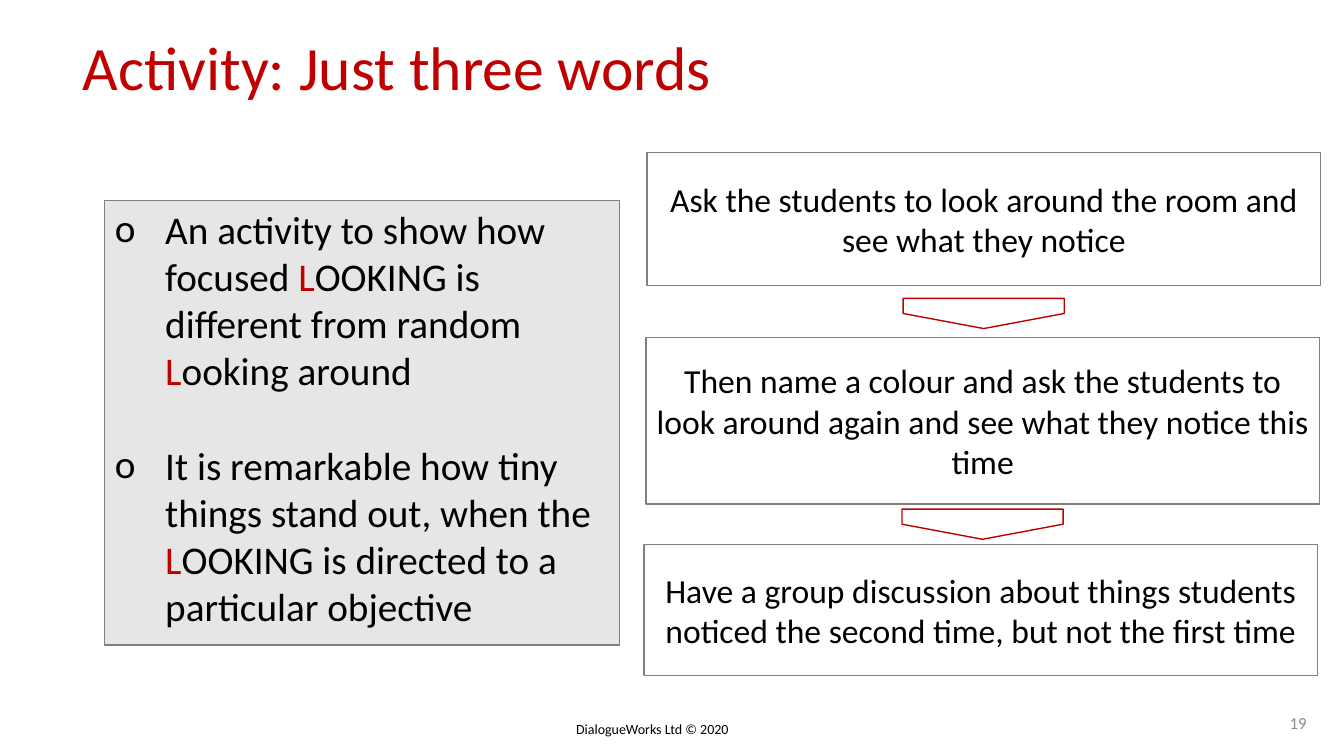
from lxml.etree import SubElement
from pptx import Presentation
from pptx.dml.color import RGBColor
from pptx.enum.shapes import MSO_SHAPE
from pptx.enum.text import MSO_ANCHOR, MSO_AUTO_SIZE, PP_ALIGN
from pptx.oxml.ns import qn
from pptx.util import Cm, Pt

COLOURS = {
    "text": "000000",
    "accent": "C00000",
    "panel": "E7E6E6",
    "outline": "808080",
    "number": "8C8C8C",
}
FONT = "Calibri"
STEP_WIDTH = 16.97
STEPS = [
    (16.31, 3.84, 3.35, "Ask the students to look around the room and see what they notice"),
    (16.28, 8.51, 4.19, "Then name a colour and ask the students to look around again "
                        "and see what they notice this time"),
    (16.23, 13.72, 3.3, "Have a group discussion about things students noticed "
                        "the second time, but not the first time"),
]
ARROWS = [(24.41, 5.87), (24.38, 11.18)]
POINTS = [
    "An activity to show how focused *L*OOKING is different from random *L*ooking around",
    "It is remarkable how tiny things stand out, when the *L*OOKING is directed "
    "to a particular objective",
]


def colour(name):
    """Return the named palette colour."""
    return RGBColor.from_string(COLOURS[name])


def place(shape, left, top, width, height):
    """Move and size a shape in centimetres."""
    shape.left, shape.top, shape.width, shape.height = map(Cm, (left, top, width, height))


def add_bullet(paragraph, character, indent):
    """Give a paragraph a hanging bullet."""
    properties = paragraph._p.get_or_add_pPr()
    properties.set("marL", str(Cm(indent)))
    properties.set("indent", str(-Cm(indent)))
    SubElement(properties, qn("a:buFont"), typeface=FONT)
    SubElement(properties, qn("a:buChar"), char=character)


def write_text(shape, *texts, size, color="text", align=PP_ALIGN.LEFT,
               anchor=MSO_ANCHOR.TOP, wrap=True, bullet=None, gap=0, line_spacing=1.0):
    """Write paragraphs, colouring the parts between asterisks with the accent."""
    frame = shape.text_frame
    frame.word_wrap = wrap
    frame.auto_size = MSO_AUTO_SIZE.NONE
    frame.vertical_anchor = anchor
    for index, text in enumerate(texts):
        paragraph = frame.add_paragraph() if index else frame.paragraphs[0]
        if bullet:
            add_bullet(paragraph, bullet, 1.27)
        paragraph.alignment = align
        paragraph.line_spacing = line_spacing
        paragraph.space_before = Pt(gap if index else 0)
        for part, words in enumerate(text.split("*")):
            run = paragraph.add_run()
            run.text = words
            run.font.name = FONT
            run.font.size = Pt(size)
            run.font.color.rgb = colour("accent" if part % 2 else color)


def set_outline(shape, line, fill=None):
    """Set the outline and fill of a shape."""
    shape.line.color.rgb = colour(line)
    shape.line.width = Pt(1)
    if fill:
        shape.fill.solid()
        shape.fill.fore_color.rgb = colour(fill)
    else:
        shape.fill.background()


def add_outlined_shape(slide, kind, left, top, width, height, line):
    """Add an unfilled preset shape without a shadow."""
    shape = slide.shapes.add_shape(kind, Cm(left), Cm(top), Cm(width), Cm(height))
    shape.shadow.inherit = False
    set_outline(shape, line)
    return shape


def add_label(slide, text, left, top, width, height, **text_format):
    """Add a text box with one line of text."""
    box = slide.shapes.add_textbox(Cm(left), Cm(top), Cm(width), Cm(height))
    write_text(box, text, **text_format)


def main():
    """Build the slide and save it."""
    presentation = Presentation()
    presentation.slide_width, presentation.slide_height = Cm(33.87), Cm(19.05)
    slide = presentation.slides.add_slide(presentation.slide_layouts[1])

    title, points = slide.placeholders
    place(title, 1.83, 0.81, 24.87, 2.69)
    write_text(title, "Activity: Just three words", size=44, color="accent", line_spacing=0.9)
    place(points, 2.64, 5.05, 12.98, 11.2)
    set_outline(points, "outline", "panel")
    write_text(points, *POINTS, size=28, bullet="o", gap=34)

    for left, top, height, text in STEPS:
        step = add_outlined_shape(slide, MSO_SHAPE.RECTANGLE, left, top,
                                  STEP_WIDTH, height, "outline")
        write_text(step, text, size=24, align=PP_ALIGN.CENTER, anchor=MSO_ANCHOR.MIDDLE)
    for left, top in ARROWS:
        arrow = add_outlined_shape(slide, MSO_SHAPE.PENTAGON, left, top, 0.76, 4.06, "accent")
        arrow.rotation = 90

    add_label(slide, "DialogueWorks Ltd © 2020", 14.27, 18.03, 4.45, 0.69, size=10, wrap=False)
    add_label(slide, "19", 31.88, 17.7, 1.3, 1.02, size=12, color="number",
              align=PP_ALIGN.RIGHT, anchor=MSO_ANCHOR.MIDDLE)
    presentation.save("out.pptx")


if __name__ == "__main__":
    main()
